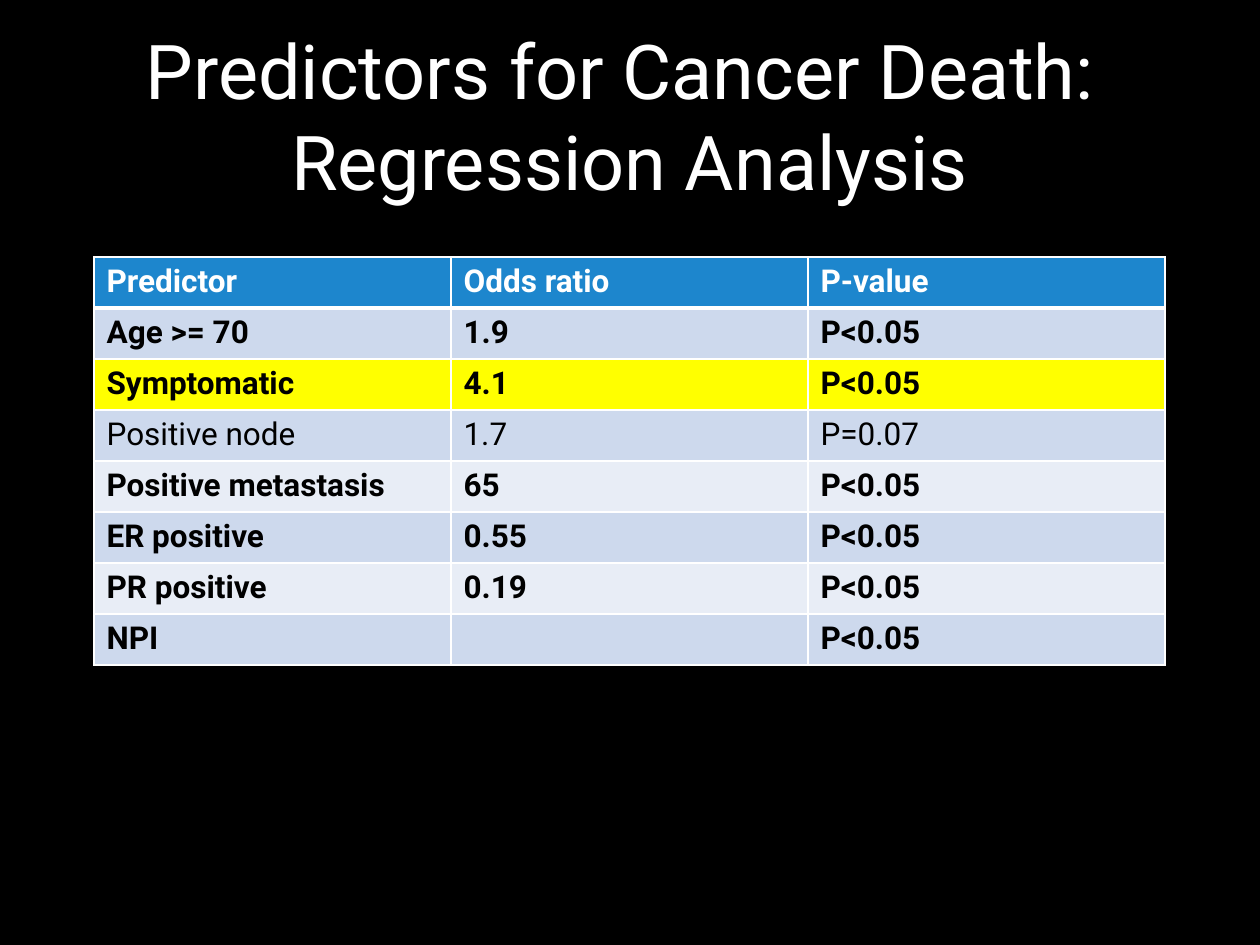
from dataclasses import dataclass

from lxml import etree
from pptx import Presentation
from pptx.dml.color import RGBColor
from pptx.enum.text import MSO_ANCHOR, MSO_AUTO_SIZE, PP_ALIGN
from pptx.oxml.ns import qn
from pptx.util import Emu, Pt

CENTER = PP_ALIGN.CENTER
MIDDLE = MSO_ANCHOR.MIDDLE
NO_FIT = MSO_AUTO_SIZE.NONE
TITLE_ONLY = 5

EMU_PER_PX = 914400 / 126
FONT = "Roboto"
COLORS = {
    "background": "000000",
    "white": "FFFFFF",
    "text": "000000",
    "header": "1D86CD",
    "odd": "CDD9ED",
    "even": "E8EDF6",
    "highlight": "FFFF00",
}

LEFT, WIDTH = 94, 1071
TITLE_TOP, TITLE_HEIGHT = 16, 197
TABLE_TOP, ROW_HEIGHT = 257, 51
HEADER = ("Predictor", "Odds ratio", "P-value")


@dataclass(frozen=True)
class Predictor:
    name: str
    odds: str
    p_value: str = "P<0.05"
    bold: bool = True
    highlight: bool = False


PREDICTORS = [
    Predictor("Age >= 70", "1.9"),
    Predictor("Symptomatic", "4.1", highlight=True),
    Predictor("Positive node", "1.7", "P=0.07", bold=False),
    Predictor("Positive metastasis", "65"),
    Predictor("ER positive", "0.55"),
    Predictor("PR positive", "0.19"),
    Predictor("NPI", ""),
]


def px(n: int) -> Emu:
    return Emu(round(n * EMU_PER_PX))


def rgb(name: str) -> RGBColor:
    return RGBColor.from_string(COLORS[name])


def set_font(p, size: float, color: str, bold: bool) -> None:
    p.font.name = FONT
    p.font.size = Pt(size)
    p.font.bold = bold
    p.font.color.rgb = rgb(color)


def add_border(cell, side: str, width: int) -> None:
    tc_pr = cell._tc.get_or_add_tcPr()
    ln = etree.SubElement(tc_pr, qn(f"a:ln{side}"), w=str(Pt(width)))
    fill = etree.SubElement(ln, qn("a:solidFill"))
    etree.SubElement(fill, qn("a:srgbClr"), val=COLORS["white"])


def fill_row(table, i: int, texts: tuple, fill: str, color: str, bold: bool) -> None:
    table.rows[i].height = px(ROW_HEIGHT)
    widths = {"L": 1, "R": 1, "T": 3 if i == 1 else 1, "B": 3 if i == 0 else 1}
    for j, text in enumerate(texts):
        cell = table.cell(i, j)
        for side, width in widths.items():
            add_border(cell, side, width)
        cell.fill.solid()
        cell.fill.fore_color.rgb = rgb(fill)
        cell.text = text
        set_font(cell.text_frame.paragraphs[0], 18, color, bold)


def add_title(slide, text: str) -> None:
    sp = slide.shapes.title
    sp.left, sp.top = px(LEFT), px(TITLE_TOP)
    sp.width, sp.height = px(WIDTH), px(TITLE_HEIGHT)
    tf = sp.text_frame
    tf.text = text
    tf.word_wrap = True
    tf.auto_size = NO_FIT
    tf.vertical_anchor = MIDDLE
    p = tf.paragraphs[0]
    p.alignment = CENTER
    set_font(p, 43.2, "white", False)


def add_predictor_table(slide, predictors: list[Predictor]) -> None:
    count = len(predictors) + 1
    table = slide.shapes.add_table(
        count, len(HEADER), px(LEFT), px(TABLE_TOP), px(WIDTH), px(count * ROW_HEIGHT)
    ).table
    fill_row(table, 0, HEADER, "header", "white", True)
    for i, item in enumerate(predictors, start=1):
        band = "odd" if i % 2 else "even"
        fill = "highlight" if item.highlight else band
        texts = (item.name, item.odds, item.p_value)
        fill_row(table, i, texts, fill, "text", item.bold)


def main() -> None:
    prs = Presentation()
    prs.slide_width, prs.slide_height = px(1260), px(945)
    slide = prs.slides.add_slide(prs.slide_layouts[TITLE_ONLY])
    slide.background.fill.solid()
    slide.background.fill.fore_color.rgb = rgb("background")
    add_title(slide, "Predictors for Cancer Death: \vRegression Analysis")
    add_predictor_table(slide, PREDICTORS)
    prs.save("out.pptx")


if __name__ == "__main__":
    main()
